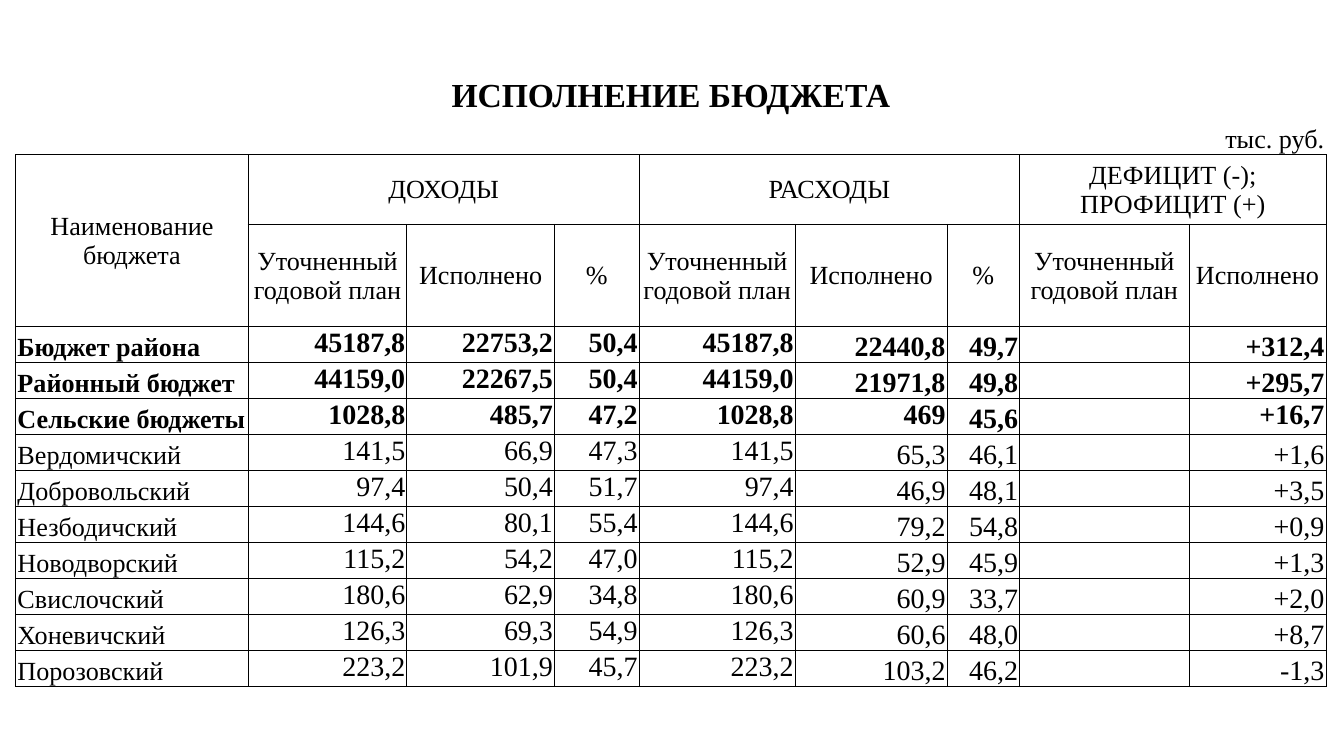
from pptx import Presentation
from pptx.dml.color import RGBColor
from pptx.enum.text import MSO_ANCHOR, PP_ALIGN
from pptx.oxml import parse_xml
from pptx.oxml.ns import nsdecls
from pptx.util import Cm, Pt

FONT = "Times New Roman"
INK, PAPER = "000000", "FFFFFF"
TOP, MID, LOW = MSO_ANCHOR.TOP, MSO_ANCHOR.MIDDLE, MSO_ANCHOR.BOTTOM
LEFT, CENTER, RIGHT = PP_ALIGN.LEFT, PP_ALIGN.CENTER, PP_ALIGN.RIGHT

WIDTHS = [4.39, 2.57, 0.43, 1.85, 0.94, 1.6, 2.95, 2.29, 0.58, 1.37, 3.2, 0.3, 2.29]
HEADS = [0.86, 0.69, 1.32, 1.93]
ROW = 0.68

# First and last grid column of each visible column
SPANS = [(0, 0), (1, 2), (3, 4), (5, 5), (6, 6), (7, 8), (9, 9), (10, 10), (11, 12)]
UNIT_SPANS = [(2, 3), (4, 5), (8, 9), (10, 11)]
GROUPS = [("ДОХОДЫ", 1, 5), ("РАСХОДЫ", 6, 9), ("ДЕФИЦИТ (-); ПРОФИЦИТ (+)", 10, 12)]
PLAN, DONE = "Уточненный годовой план", "Исполнено"
LABELS = [PLAN, DONE, "%", PLAN, DONE, "%", PLAN, DONE]

TOTALS = 3
# Name, income plan, income, %, spending plan, spending, %, balance plan, balance
BODY = [
    ("Бюджет района", "45187,8", "22753,2", "50,4", "45187,8", "22440,8", "49,7", "", "+312,4"),
    ("Районный бюджет", "44159,0", "22267,5", "50,4", "44159,0", "21971,8", "49,8", "", "+295,7"),
    ("Сельские бюджеты", "1028,8", "485,7", "47,2", "1028,8", "469", "45,6", "", "+16,7"),
    ("Вердомичский", "141,5", "66,9", "47,3", "141,5", "65,3", "46,1", "", "+1,6"),
    ("Добровольский", "97,4", "50,4", "51,7", "97,4", "46,9", "48,1", "", "+3,5"),
    ("Незбодичский", "144,6", "80,1", "55,4", "144,6", "79,2", "54,8", "", "+0,9"),
    ("Новодворский", "115,2", "54,2", "47,0", "115,2", "52,9", "45,9", "", "+1,3"),
    ("Свислочский", "180,6", "62,9", "34,8", "180,6", "60,9", "33,7", "", "+2,0"),
    ("Хоневичский", "126,3", "69,3", "54,9", "126,3", "60,6", "48,0", "", "+8,7"),
    ("Порозовский", "223,2", "101,9", "45,7", "223,2", "103,2", "46,2", "", "-1,3"),
]


def color(code):
    return RGBColor.from_string(code)


def border(cell, sides):
    """Draw a thin line on each of the given sides, and none on the others."""
    props = cell._tc.get_or_add_tcPr()
    for side in "LRTB":
        fill = (f'<a:solidFill><a:srgbClr val="{INK}"/></a:solidFill>'
                if side in sides else "<a:noFill/>")
        props.append(parse_xml(f'<a:ln{side} {nsdecls("a")} w="{Pt(0.5)}">{fill}</a:ln{side}>'))


def write(cell, text, size=14, bold=False, align=CENTER, anchor=MID):
    cell.vertical_anchor = anchor
    line = cell.text_frame.paragraphs[0]
    if text:
        line.text = text
    line.alignment = align
    font = line.font
    font.name, font.size, font.bold = FONT, Pt(size), bold
    font.color.rgb = color(INK)


def style(table):
    for i, row in enumerate(table.rows):
        sides = "" if i == 0 else "B" if i == 1 else "LRTB"
        for cell in row.cells:
            border(cell, sides)
            cell.fill.solid()
            cell.fill.fore_color.rgb = color(PAPER)
            cell.margin_left = cell.margin_right = cell.margin_top = Cm(0.03)
            cell.margin_bottom = 0
            write(cell, "", size=10)


def merge(table, row, first, last, end=None):
    cell = table.cell(row, first)
    other = table.cell(row if end is None else end, last)
    if cell != other and (first != last or end is not None):
        cell.merge(other)
    return cell


def header(table):
    write(merge(table, 0, 0, len(WIDTHS) - 1), "ИСПОЛНЕНИЕ БЮДЖЕТА", 18, True)
    for first, last in UNIT_SPANS:
        merge(table, 1, first, last)
    write(table.cell(1, 12), "тыс. руб.", align=RIGHT, anchor=LOW)
    write(merge(table, 2, 0, 0, end=3), "Наименование бюджета")
    for text, first, last in GROUPS:
        write(merge(table, 2, first, last), text)
    for text, (first, last) in zip(LABELS, SPANS[1:]):
        write(merge(table, 3, first, last), text)


def body(table):
    for i, record in enumerate(BODY):
        bold = i < TOTALS
        for j, (text, (first, last)) in enumerate(zip(record, SPANS)):
            cell = merge(table, len(HEADS) + i, first, last)
            if j == 0:
                write(cell, text, 14, bold, LEFT, LOW)
            elif text:
                # The village total keeps its spending and balance at the top
                high = j < 5 or (i == TOTALS - 1 and j in (5, 8))
                write(cell, text, 15, bold, RIGHT, TOP if high else LOW)


def budget(slide, left, top):
    heights = HEADS + [ROW] * len(BODY)
    frame = slide.shapes.add_table(len(heights), len(WIDTHS), Cm(left), Cm(top),
                                   Cm(sum(WIDTHS)), Cm(sum(heights)))
    table = frame.table
    table.first_row = table.horz_banding = False
    for col, width in zip(table.columns, WIDTHS):
        col.width = Cm(width)
    for row, height in zip(table.rows, heights):
        row.height = Cm(height)
    style(table)
    header(table)
    body(table)


def main():
    deck = Presentation()
    deck.slide_width, deck.slide_height = Cm(25.4), Cm(14.29)
    slide = deck.slides.add_slide(deck.slide_layouts[6])
    budget(slide, 0.3, 1.37)
    deck.save("out.pptx")


if __name__ == "__main__":
    main()
